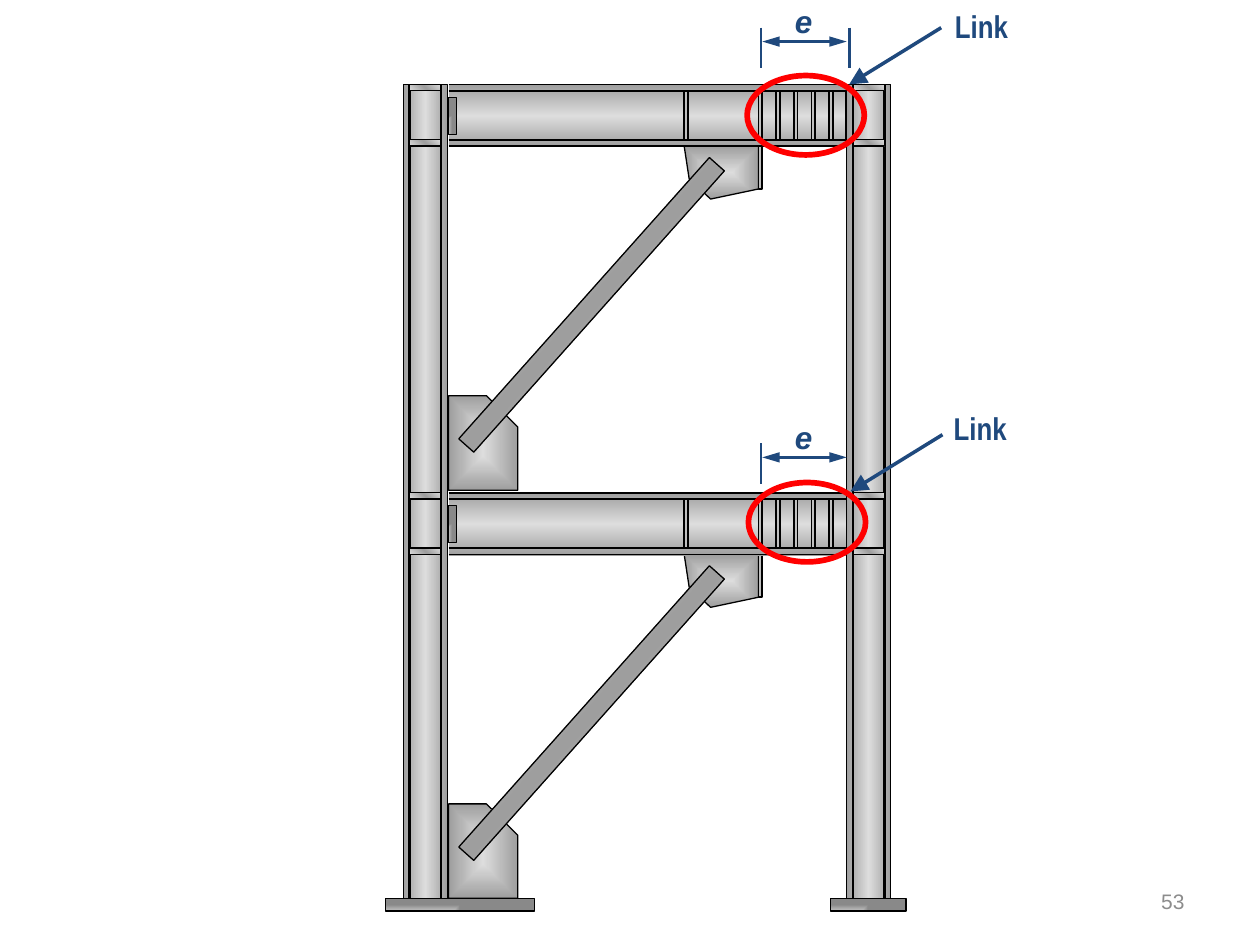
from dataclasses import dataclass
from lxml import etree
from pptx import Presentation
from pptx.dml.color import RGBColor
from pptx.enum.shapes import MSO_CONNECTOR, MSO_SHAPE
from pptx.enum.text import MSO_ANCHOR, MSO_AUTO_SIZE, PP_ALIGN
from pptx.oxml import parse_xml
from pptx.oxml.ns import qn
from pptx.util import Inches, Pt

RECTANGLE, ELLIPSE = MSO_SHAPE.RECTANGLE, MSO_SHAPE.OVAL
STRAIGHT = MSO_CONNECTOR.STRAIGHT
LEFT, RIGHT = PP_ALIGN.LEFT, PP_ALIGN.RIGHT
TOP, MIDDLE = MSO_ANCHOR.TOP, MSO_ANCHOR.MIDDLE
GROW, FIXED = MSO_AUTO_SIZE.SHAPE_TO_FIT_TEXT, MSO_AUTO_SIZE.NONE
NAMESPACE = "http://schemas.openxmlformats.org/drawingml/2006/main"


@dataclass(frozen=True)
class Theme:
    """Colours, fonts and type sizes of the slide."""
    ink: str = "000000"
    steel: str = "DDDDDD"
    plate: str = "C0C0C0"
    accent: str = "1F497D"
    ring: str = "FF0000"
    muted: str = "8C8C8C"
    shade: int = 46275
    sans: str = "Arial"
    narrow: str = "Arial Narrow"
    label_size: int = 18
    number_size: int = 12


@dataclass(frozen=True)
class Box:
    """A region in inches."""
    left: float
    top: float
    width: float
    height: float

    def inner(self, left, top, width, height):
        """Return a box placed relative to this one."""
        return Box(self.left + left, self.top + top, width, height)

    def emu(self):
        """Return the box as four lengths."""
        return [Inches(v) for v in (self.left, self.top, self.width, self.height)]


THEME = Theme()


def gradient(color, shaded, angle=None, focus=None):
    """Return a gradient fill whose stops are plain or shaded."""
    last = len(shaded) - 1
    stops = "".join(
        f'<a:gs pos="{100000 * i // last}"><a:srgbClr val="{color}">'
        + (f'<a:shade val="{THEME.shade}"/>' if dark else "")
        + "</a:srgbClr></a:gs>" for i, dark in enumerate(shaded))
    if focus:
        sides = " ".join(f'{side}="{value * 1000}"' for side, value in zip("ltrb", focus))
        way = f'<a:path path="rect"><a:fillToRect {sides}/></a:path>'
    else:
        way = f'<a:lin ang="{angle * 60000}" scaled="1"/>'
    return (f'<a:gradFill xmlns:a="{NAMESPACE}" rotWithShape="1">'
            f"<a:gsLst>{stops}</a:gsLst>{way}</a:gradFill>")


BEAM_FILL = gradient(THEME.steel, (1, 0, 1), angle=90)
COLUMN_FILL = gradient(THEME.steel, (1, 0, 1), angle=0)
BRACE_FILL = gradient(THEME.steel, (0, 1, 0), angle=90)
DIAPHRAGM_FILL = gradient(THEME.steel, (0, 1, 0), angle=315)
GUSSET_FILL = gradient(THEME.steel, (0, 1), focus=(50, 50, 50, 50))
PLATE_FILL = gradient(THEME.plate, (0, 1), focus=(0, 100, 100, 0))


def paint(shape, fill, color, width):
    """Set the fill and outline of a shape."""
    shape.shadow.inherit = False
    shape.fill.background()
    if fill and fill.startswith("<"):
        properties = shape.fill._xPr
        properties.replace(properties.find(qn("a:noFill")), parse_xml(fill))
    elif fill:
        shape.fill.solid()
        shape.fill.fore_color.rgb = RGBColor.from_string(fill)
    if width:
        shape.line.color.rgb = RGBColor.from_string(color)
        shape.line.width = Pt(width)
    else:
        shape.line.fill.background()


def add_part(page, box, fill=None, color=THEME.ink, width=0.75, kind=RECTANGLE):
    """Add a preset shape and return it."""
    shape = page.shapes.add_shape(kind, *box.emu())
    paint(shape, fill, color, width)
    return shape


def add_gusset(page, box, corners):
    """Add a gusset plate from corners relative to the box."""
    points = [(Inches(box.left + x), Inches(box.top + y)) for x, y in corners]
    builder = page.shapes.build_freeform(*points[0])
    builder.add_line_segments(points[1:], close=True)
    paint(builder.convert_to_shape(), GUSSET_FILL, THEME.ink, 0.75)


def add_line(page, start, end, color=THEME.ink, width=1, heads=(), size=("med", "med")):
    """Add a straight line with optional arrowheads."""
    line = page.shapes.add_connector(STRAIGHT, *[Inches(v) for v in (*start, *end)])
    line.line.color.rgb = RGBColor.from_string(color)
    line.line.width = Pt(width)
    outline = line.line._get_or_add_ln()
    for name in heads:
        etree.SubElement(outline, qn(f"a:{name}"), type="triangle", w=size[0], len=size[1])
    etree.SubElement(outline.getparent(), qn("a:effectLst"))


def add_text(page, box, text, size=THEME.label_size, font=THEME.sans, color=THEME.accent,
             bold=True, italic=False, align=LEFT, anchor=TOP, fit=GROW):
    """Add a text box with one formatted paragraph."""
    frame = page.shapes.add_textbox(*box.emu()).text_frame
    frame.word_wrap = True
    frame.auto_size = fit
    frame.vertical_anchor = anchor
    para = frame.paragraphs[0]
    para.alignment = align
    span = para.add_run()
    span.text = text
    span.font.name, span.font.size = font, Pt(size)
    span.font.bold, span.font.italic = bold, italic
    span.font.color.rgb = RGBColor.from_string(color)


def draw_storey(page, box, stiffeners):
    """Draw a link beam with its brace, gussets and stiffeners."""
    split = 2.49
    add_gusset(page, box, [(0, 2.47), (0.3, 2.47), (0.55, 2.72), (0.55, 3.22), (0, 3.22)])
    add_gusset(page, box, [(2.46, 0.83), (2.08, 0.91), (1.91, 0.75), (1.87, 0.49), (2.46, 0.49)])
    add_part(page, box.inner(2.46, 0.49, 0.03, 0.34), THEME.plate, width=1)
    add_part(page, box.inner(0, 0, split, 0.5), BEAM_FILL, width=0)
    add_part(page, box.inner(0, 0.1, 0.06, 0.3), PLATE_FILL, width=0.5)
    add_part(page, box.inner(-0.36, 1.67, 2.99, 0.16), BRACE_FILL).rotation = 311.7
    add_part(page, box.inner(split, 0, box.width - split, 0.5), BEAM_FILL, width=0)
    for start, end in ((0, split), (split, box.width)):
        for height in (0, 0.05, 0.44, 0.49):
            y = box.top + height
            add_line(page, (box.left + start, y), (box.left + end, y))
    for x in stiffeners:
        add_part(page, box.inner(x, 0.05, 0.03, 0.39), THEME.plate, width=1)


def draw_column(page, box, storey_tops):
    """Draw a column with flange lines and diaphragm plates."""
    add_part(page, box, COLUMN_FILL)
    for x in (box.left + 0.05, box.left + 0.3):
        add_line(page, (x, box.top), (x, box.top + box.height), width=1.25)
    for top in storey_tops:
        for offset in (0.44, 0):
            add_part(page, box.inner(0.05, top - box.top + offset, 0.25, 0.05), DIAPHRAGM_FILL)


def draw_link_callout(page, box, label):
    """Ring the link and point to it from its label."""
    add_part(page, box, color=THEME.ring, width=3.25, kind=ELLIPSE)
    add_text(page, label, "Link", font=THEME.narrow)
    add_line(page, (box.left + 1.54, box.top - 0.38), (box.left + 0.81, box.top + 0.07),
             THEME.accent, 2, ["tailEnd"], ("lg", "lg"))


def draw_dimension(page, box, extensions):
    """Draw the link length with its extension lines."""
    for x in extensions:
        add_line(page, (box.left + x, box.top), (box.left + x, box.top + box.height),
                 THEME.accent, 1.5)
    y = box.top + 0.11
    add_line(page, (box.left + 0.01, y), (box.left + 0.68, y), THEME.accent, 1.5,
             ["headEnd", "tailEnd"], ("med", "lg"))
    add_text(page, box.inner(0.17, -0.25, 0.33, 0.4), "e", italic=True)


def main():
    """Build the braced frame slide."""
    deck = Presentation()
    deck.slide_width, deck.slide_height = Inches(10), Inches(7.5)
    page = deck.slides.add_slide(deck.slide_layouts[6])
    tops = (0.67, 3.91)
    stiffeners = [1.87, 2.46] + [2.6 + 0.14 * i for i in range(4)]
    draw_storey(page, Box(3.56, tops[1], 3.16, 3.22), stiffeners)
    draw_storey(page, Box(3.56, tops[0], 3.16, 3.22), stiffeners + [3.15])
    for left in (3.2, 6.72):
        draw_column(page, Box(left, tops[0], 0.35, 6.46), tops)
    for left, width in ((3.06, 1.18), (6.59, 0.6)):
        add_part(page, Box(left, 7.13, width, 0.1), PLATE_FILL)
    draw_link_callout(page, Box(5.93, 0.6, 0.93, 0.63), Box(7.48, 0.01, 1.32, 0.5))
    draw_link_callout(page, Box(5.94, 3.83, 0.93, 0.63), Box(7.47, 3.2, 1.32, 0.5))
    draw_dimension(page, Box(6.04, 0.22, 0.7, 0.32), (0, 0.7))
    draw_dimension(page, Box(6.04, 3.52, 0.7, 0.32), (0,))
    add_text(page, Box(7.17, 6.95, 2.33, 0.4), "53", size=THEME.number_size,
             color=THEME.muted, bold=False, align=RIGHT, anchor=MIDDLE, fit=FIXED)
    deck.save("out.pptx")


if __name__ == "__main__":
    main()
